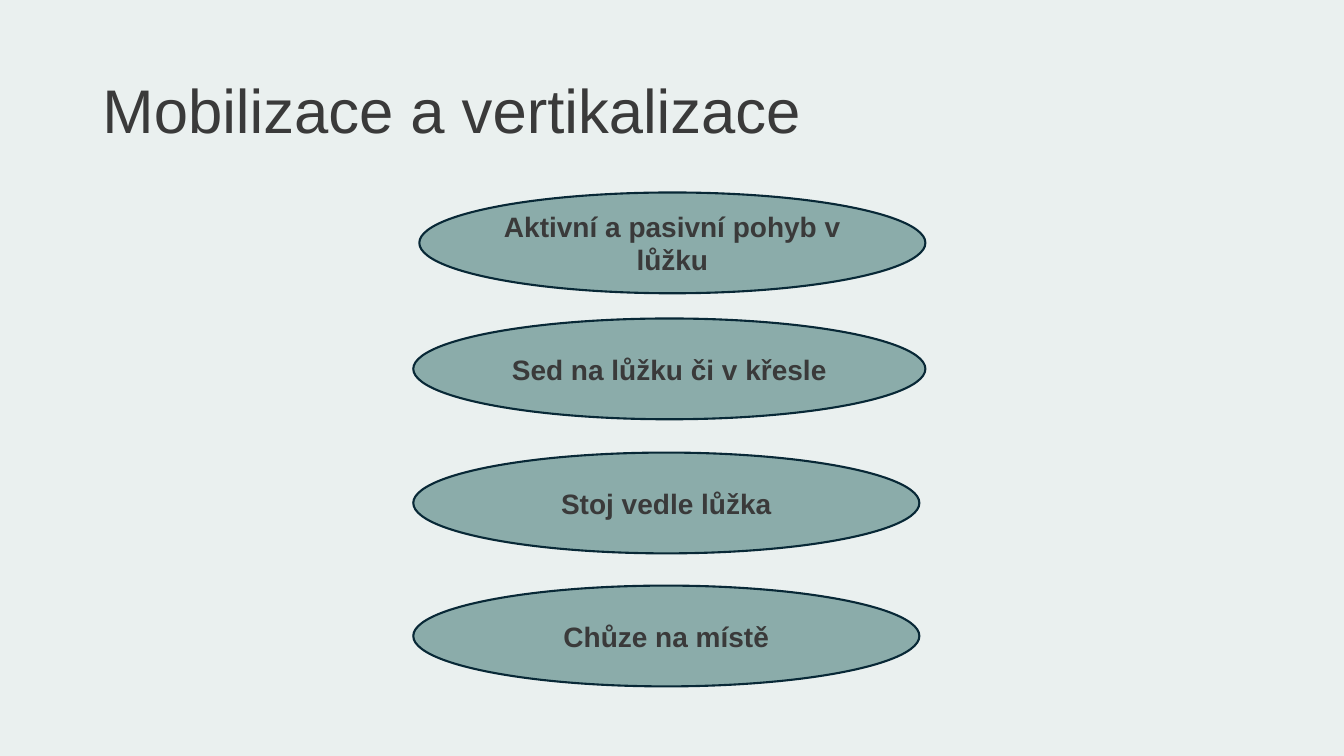
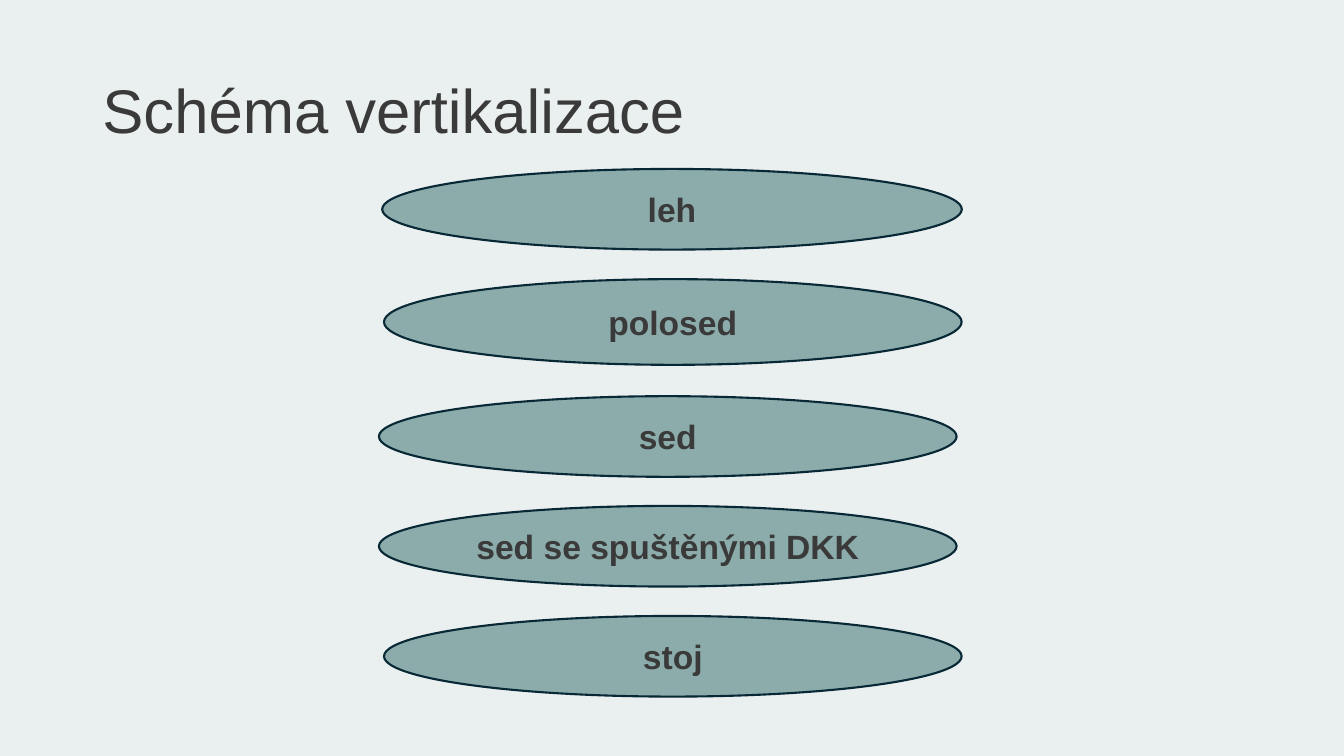
"""Build two slides on mobilisation, each a column of labelled ovals."""
from dataclasses import dataclass

from pptx import Presentation
from pptx.dml.color import RGBColor
from pptx.enum import shapes, text
from pptx.util import Pt


@dataclass(frozen=True)
class Theme:
    font: str = "Arial"
    ink: str = "3A3A3A"
    oval: str = "8BACAA"
    outline: str = "082836"
    background: str = "EAF0EF"
    title_size: int = 44
    outline_width: float = 1.5


THEME = Theme()

MOBILISATION = [
    ("Aktivní a pasivní pohyb v lůžku", (299.5, 137.5, 361.5, 72)),
    ("Sed na lůžku či v křesle", (295.2, 227.5, 365.8, 72)),
    ("Stoj vedle lůžka", (295.2, 323.3, 361.5, 72)),
    ("Chůze na místě", (295.2, 418.3, 361.5, 72)),
]
VERTICALISATION = [
    ("leh", (273, 120.7, 414, 57.6)),
    ("polosed", (274.3, 199.4, 412.6, 61.2)),
    ("sed", (270.7, 283, 412.6, 57.6)),
    ("sed se spuštěnými DKK", (270.7, 361.4, 412.6, 57.6)),
    ("stoj", (274.3, 440, 412.6, 57.6)),
]


def rgb(value):
    return RGBColor.from_string(value)


def write(tf, content, size, bold=False, align=text.PP_ALIGN.LEFT, spacing=None):
    tf.word_wrap = True
    tf.vertical_anchor = text.MSO_ANCHOR.MIDDLE
    p = tf.paragraphs[0]
    p.alignment = align
    p.line_spacing = spacing
    r = p.add_run()
    r.text = content
    r.font.name = THEME.font
    r.font.size = Pt(size)
    r.font.bold = bold
    r.font.color.rgb = rgb(THEME.ink)


def add_oval(s, label, box, size):
    sp = s.shapes.add_shape(shapes.MSO_SHAPE.OVAL, *map(Pt, box))
    sp.shadow.inherit = False
    sp.fill.solid()
    sp.fill.fore_color.rgb = rgb(THEME.oval)
    sp.line.color.rgb = rgb(THEME.outline)
    sp.line.width = Pt(THEME.outline_width)
    write(sp.text_frame, label, size, bold=True, align=text.PP_ALIGN.CENTER)


def add_oval_slide(prs, layout, title, ovals, size):
    s = prs.slides.add_slide(layout)
    write(s.shapes.title.text_frame, title, THEME.title_size, spacing=0.9)
    for label, box in ovals:
        add_oval(s, label, box, size)


def set_up_layout(prs):
    fill = prs.slide_master.background.fill
    fill.solid()
    fill.fore_color.rgb = rgb(THEME.background)
    layout = prs.slide_layouts.get_by_name("Title Only")
    title = layout.placeholders[0]
    title.left, title.top, title.width, title.height = map(Pt, (66, 28.8, 828, 104.4))
    return layout


def main():
    prs = Presentation()
    prs.slide_width, prs.slide_height = Pt(960), Pt(540)
    layout = set_up_layout(prs)
    add_oval_slide(prs, layout, "Mobilizace a vertikalizace", MOBILISATION, 20)
    add_oval_slide(prs, layout, "Schéma vertikalizace", VERTICALISATION, 24)
    prs.save("out.pptx")


if __name__ == "__main__":
    main()
